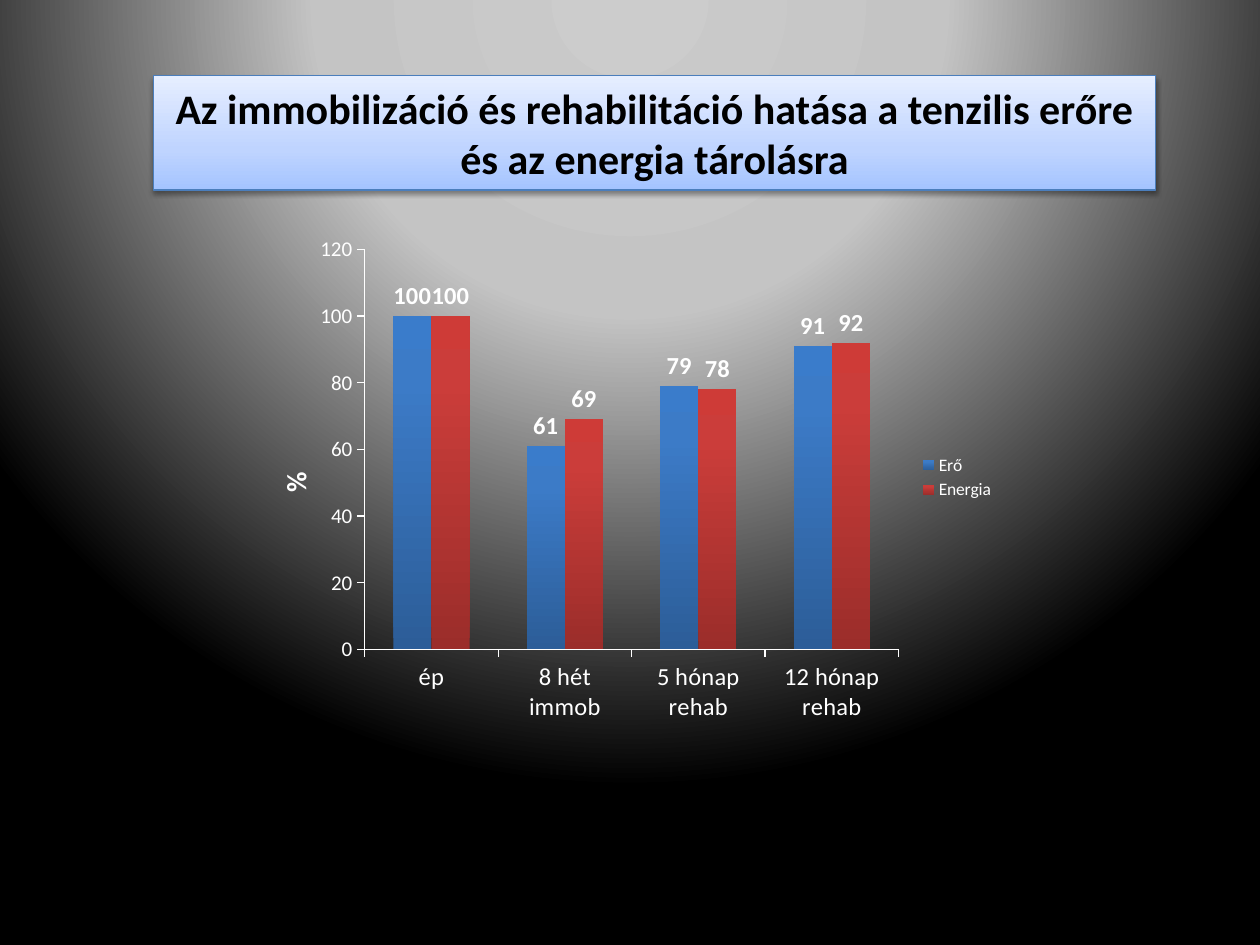
from pptx import Presentation
from pptx.chart.data import CategoryChartData
from pptx.dml.color import RGBColor
from pptx.enum.chart import XL_CHART_TYPE, XL_LABEL_POSITION, XL_LEGEND_POSITION, XL_TICK_MARK
from pptx.enum.text import MSO_ANCHOR, PP_ALIGN
from pptx.oxml import parse_xml
from pptx.oxml.ns import nsdecls, qn
from pptx.util import Cm, Pt

COLUMNS = XL_CHART_TYPE.COLUMN_CLUSTERED
OUTSIDE_END = XL_LABEL_POSITION.OUTSIDE_END
LEGEND_RIGHT = XL_LEGEND_POSITION.RIGHT
TICK_OUTSIDE, TICK_NONE = XL_TICK_MARK.OUTSIDE, XL_TICK_MARK.NONE
CENTER = PP_ALIGN.CENTER
MIDDLE = MSO_ANCHOR.MIDDLE

TITLE = "Az immobilizáció és rehabilitáció hatása a tenzilis erőre és az energia tárolásra"
AXIS_TITLE = "%"
CATEGORIES = ["ép", "8 hét immob", "5 hónap rehab", "12 hónap rehab"]
SERIES = [("Erő", [100, 61, 79, 91]), ("Energia", [100, 69, 78, 92])]

THEME = {
    "font": "Calibri",
    "title_color": "000000",
    "title_line": "4B7EBC",
    "chart_color": "FFFFFF",
    "title_size": 24,
    "axis_title_size": 16,
    "label_size": 14,
    "value_size": 12,
    "legend_size": 10,
    "background": [(0, "CCCCCC"), (40, "C4C4C4"), (100, "000000")],
    "title_fill": [(0, "A4C4FF"), (35, "BFD4FF"), (100, "E6EEFF")],
    "bars": [
        [(0, "2C5D98"), (80, "3C7BC7"), (100, "3A7CCB")],
        [(0, "9B2D2A"), (80, "CB3D3A"), (100, "CE3B37")],
    ],
}
UPWARD = '<a:lin ang="16200000" scaled="0"/>'
FROM_ABOVE = ('<a:path path="circle">'
              '<a:fillToRect l="50000" t="-80000" r="50000" b="180000"/></a:path>')
SHADOW = ('<a:effectLst {}><a:outerShdw blurRad="39370" dist="20320" dir="5400000" '
          'rotWithShape="0"><a:srgbClr val="000000"><a:alpha val="38000"/></a:srgbClr>'
          '</a:outerShdw></a:effectLst>')


def format_font(font, size, color=THEME["chart_color"], bold=False):
    font.name = THEME["font"]
    font.size = Pt(size)
    font.bold = bold
    font.color.rgb = RGBColor.from_string(color)


def write_text(text_frame, text, align=CENTER, **font_format):
    paragraph = text_frame.paragraphs[0]
    paragraph.alignment = align
    run = paragraph.add_run()
    run.text = text
    format_font(run.font, **font_format)


def set_gradient(fill, properties, stops, direction):
    fill.solid()
    stop_xml = "".join(f'<a:gs pos="{position * 1000}"><a:srgbClr val="{color}"/></a:gs>'
                       for position, color in stops)
    gradient = parse_xml(f'<a:gradFill {nsdecls("a")} rotWithShape="1">'
                         f'<a:gsLst>{stop_xml}</a:gsLst>{direction}</a:gradFill>')
    properties.replace(properties.find(qn("a:solidFill")), gradient)


def set_layout(parent, index, **values):
    existing = parent.find(qn("c:layout"))
    if existing is not None:
        parent.remove(existing)
    target = '<c:layoutTarget val="inner"/>' if "w" in values else ""
    modes = "".join(f'<c:{key}Mode val="edge"/>' for key in "xy")
    sizes = "".join(f'<c:{key} val="{value}"/>' for key, value in values.items())
    parent.insert(index, parse_xml(f'<c:layout {nsdecls("c")}><c:manualLayout>'
                                   f'{target}{modes}{sizes}</c:manualLayout></c:layout>'))


def add_strength_chart(slide):
    data = CategoryChartData()
    data.categories = CATEGORIES
    for name, values in SERIES:
        data.add_series(name, values)
    chart = slide.shapes.add_chart(COLUMNS, Cm(4.7), Cm(4.52), Cm(15.6), Cm(10.21), data).chart
    chart.has_title = False
    format_font(chart.font, THEME["legend_size"])
    chart.has_legend = True
    chart.legend.position = LEGEND_RIGHT
    chart.legend.include_in_layout = False
    format_font(chart.legend.font, THEME["legend_size"])

    plot = chart.plots[0]
    plot.gap_width = 150
    plot.overlap = 0
    plot.vary_by_categories = False
    for series, stops in zip(plot.series, THEME["bars"]):
        series.format.fill.solid()
        properties = chart.element.xpath(".//c:ser/c:spPr")[series.index]
        set_gradient(series.format.fill, properties, stops, UPWARD)
        labels = series.data_labels
        labels.show_value = True
        labels.position = OUTSIDE_END
        format_font(labels.font, THEME["label_size"], bold=True)

    value_axis = chart.value_axis
    value_axis.minimum_scale, value_axis.maximum_scale, value_axis.major_unit = 0, 120, 20
    value_axis.has_major_gridlines = False
    axis_sizes = [(chart.category_axis, "label_size"), (value_axis, "value_size")]
    for axis, size in axis_sizes:
        axis.major_tick_mark = TICK_OUTSIDE
        axis.minor_tick_mark = TICK_NONE
        axis.format.line.color.rgb = RGBColor.from_string(THEME["chart_color"])
        axis.format.line.width = Pt(0.75)
        format_font(axis.tick_labels.font, THEME[size])

    write_text(value_axis.axis_title.text_frame, AXIS_TITLE,
               size=THEME["axis_title_size"], bold=True)
    title = chart.element.xpath(".//c:valAx/c:title")[0]
    title.xpath(".//a:bodyPr")[0].set("rot", "-5400000")
    set_layout(title, 1, x=0.05, y=0.48)
    set_layout(chart.element.xpath(".//c:plotArea")[0], 0, x=0.17, y=0.05, w=0.69, h=0.79)


def add_title(slide):
    title = slide.shapes.title
    title.left, title.top, title.width, title.height = Cm(3.1), Cm(1.52), Cm(20.19), Cm(2.31)
    properties = title.element.spPr
    set_gradient(title.fill, properties, THEME["title_fill"], UPWARD)
    title.line.color.rgb = RGBColor.from_string(THEME["title_line"])
    title.line.width = Pt(0.75)
    properties.append(parse_xml(SHADOW.format(nsdecls("a"))))
    title.text_frame.word_wrap = True
    title.text_frame.vertical_anchor = MIDDLE
    write_text(title.text_frame, TITLE, size=THEME["title_size"],
               color=THEME["title_color"], bold=True)


def main():
    presentation = Presentation()
    presentation.slide_width, presentation.slide_height = Cm(25.4), Cm(19.05)
    slide = presentation.slides.add_slide(presentation.slide_layouts[5])
    background = slide.background.fill
    background.solid()
    set_gradient(background, slide.element.xpath(".//p:bgPr")[0],
                 THEME["background"], FROM_ABOVE)
    add_strength_chart(slide)
    add_title(slide)
    presentation.save("out.pptx")


if __name__ == "__main__":
    main()
